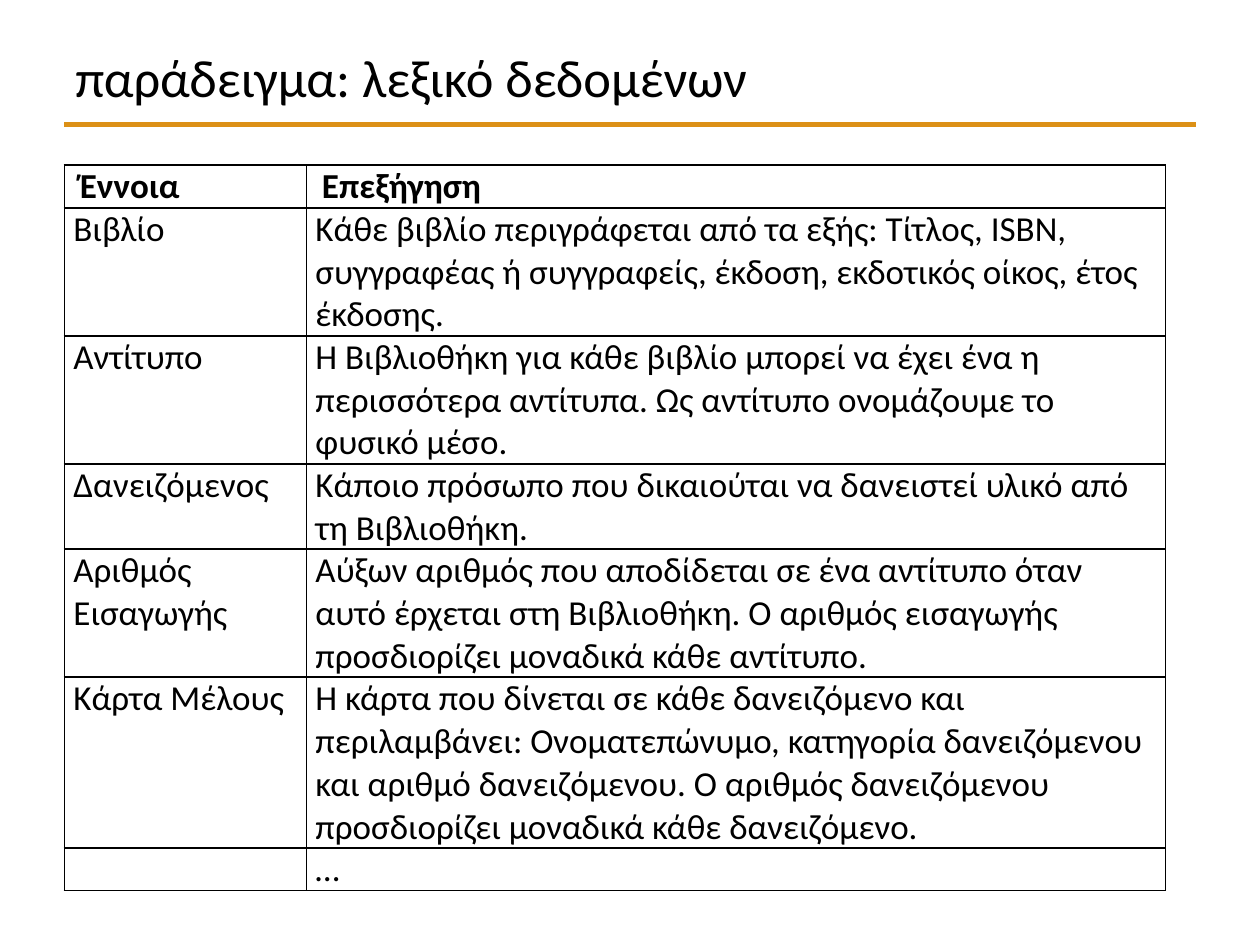
from lxml.etree import SubElement
from pptx import Presentation
from pptx.dml.color import RGBColor
from pptx.enum.shapes import MSO_CONNECTOR as Connector
from pptx.enum.text import MSO_ANCHOR as Anchor
from pptx.oxml.ns import qn
from pptx.util import Cm, Pt

COLOURS = {"text": "000000", "border": "000000", "rule": "DC9016"}
LINE_HEIGHT = 0.86  # one line of table text, in cm

HEADER = ("Έννοια", "Επεξήγηση")
# term, explanation, lines of text in the row
ENTRIES = [
    ("Βιβλίο", "Κάθε βιβλίο περιγράφεται από τα εξής: Τίτλος, ISBN, συγγραφέας ή "
     "συγγραφείς, έκδοση, εκδοτικός οίκος, έτος έκδοσης.", 3),
    ("Αντίτυπο", "Η Βιβλιοθήκη για κάθε βιβλίο μπορεί να έχει ένα η περισσότερα "
     "αντίτυπα. Ως αντίτυπο ονομάζουμε το φυσικό μέσο.", 3),
    ("Δανειζόμενος", "Κάποιο πρόσωπο που δικαιούται να δανειστεί υλικό από τη "
     "Βιβλιοθήκη.", 2),
    ("Αριθμός Εισαγωγής", "Αύξων αριθμός που αποδίδεται σε ένα αντίτυπο όταν αυτό "
     "έρχεται στη Βιβλιοθήκη. Ο αριθμός εισαγωγής προσδιορίζει μοναδικά κάθε "
     "αντίτυπο.", 3),
    ("Κάρτα Μέλους", "Η κάρτα που δίνεται σε κάθε δανειζόμενο και περιλαμβάνει: "
     "Ονοματεπώνυμο, κατηγορία δανειζόμενου και αριθμό δανειζόμενου. Ο αριθμός "
     "δανειζόμενου προσδιορίζει μοναδικά κάθε δανειζόμενο.", 4),
    ("", "…", 1),
]


class SlideBuilder:
    """Holds the style and the current slide."""

    font_name = "Calibri"

    def __init__(self, slide):
        self.slide = slide

    def colour(self, name):
        return RGBColor.from_string(COLOURS[name])

    def style(self, para, size, bold=False):
        para.font.name = self.font_name
        para.font.size = Pt(size)
        para.font.bold = bold
        para.font.color.rgb = self.colour("text")

    def title(self, text, left, top, width, height):
        box = self.slide.shapes.add_textbox(Cm(left), Cm(top), Cm(width), Cm(height))
        frame = box.text_frame
        frame.word_wrap = True
        frame.vertical_anchor = Anchor.MIDDLE
        frame.text = text
        self.style(frame.paragraphs[0], 30)

    def rule(self, left, right, top):
        line = self.slide.shapes.add_connector(
            Connector.STRAIGHT, Cm(left), Cm(top), Cm(right), Cm(top))
        line.line.color.rgb = self.colour("rule")
        line.line.width = Pt(2.5)
        SubElement(line._element.spPr, qn("a:effectLst"))

    def borders(self, cell):
        properties = cell._tc.get_or_add_tcPr()
        for position, side in enumerate(("lnL", "lnR", "lnT", "lnB")):
            line = SubElement(properties, qn(f"a:{side}"), w=str(Pt(1)))
            fill = SubElement(line, qn("a:solidFill"))
            SubElement(fill, qn("a:srgbClr"), val=COLOURS["border"])
            properties.insert(position, line)  # borders precede the fill

    def cell(self, cell, text, header):
        cell.fill.background()
        cell.margin_left = cell.margin_right = Cm(0.18)
        cell.margin_top = cell.margin_bottom = 0
        cell.text = text
        para = cell.text_frame.paragraphs[0]
        self.style(para, 20, bold=header)
        para.space_after = Pt(3)
        if header:
            para.space_before = para.space_after = Pt(4)
            para._p.get_or_add_pPr().set("marL", str(Cm(0.13)))
        self.borders(cell)

    def table(self, rows, left, top, widths):
        height = LINE_HEIGHT * sum(lines for *_, lines in rows)
        table = self.slide.shapes.add_table(
            len(rows), len(widths), Cm(left), Cm(top),
            Cm(sum(widths)), Cm(height)).table
        table.horz_banding = False
        for column, width in zip(table.columns, widths):
            column.width = Cm(width)
        for index, (*texts, lines) in enumerate(rows):
            table.rows[index].height = Cm(LINE_HEIGHT * lines)
            for cell, text in zip(table.rows[index].cells, texts):
                self.cell(cell, text, header=index == 0)


def main():
    deck = Presentation()
    deck.slide_width, deck.slide_height = Cm(25.4), Cm(19.05)
    page = SlideBuilder(deck.slides.add_slide(deck.slide_layouts[6]))

    # Heading
    page.rule(1.3, 24.1, 2.51)
    page.title("παράδειγμα: λεξικό δεδομένων", 1.27, 0.76, 22.86, 1.55)

    # Data dictionary
    page.table([(*HEADER, 1), *ENTRIES], 1.3, 3.33, (4.88, 17.32))

    deck.save("out.pptx")


if __name__ == "__main__":
    main()
